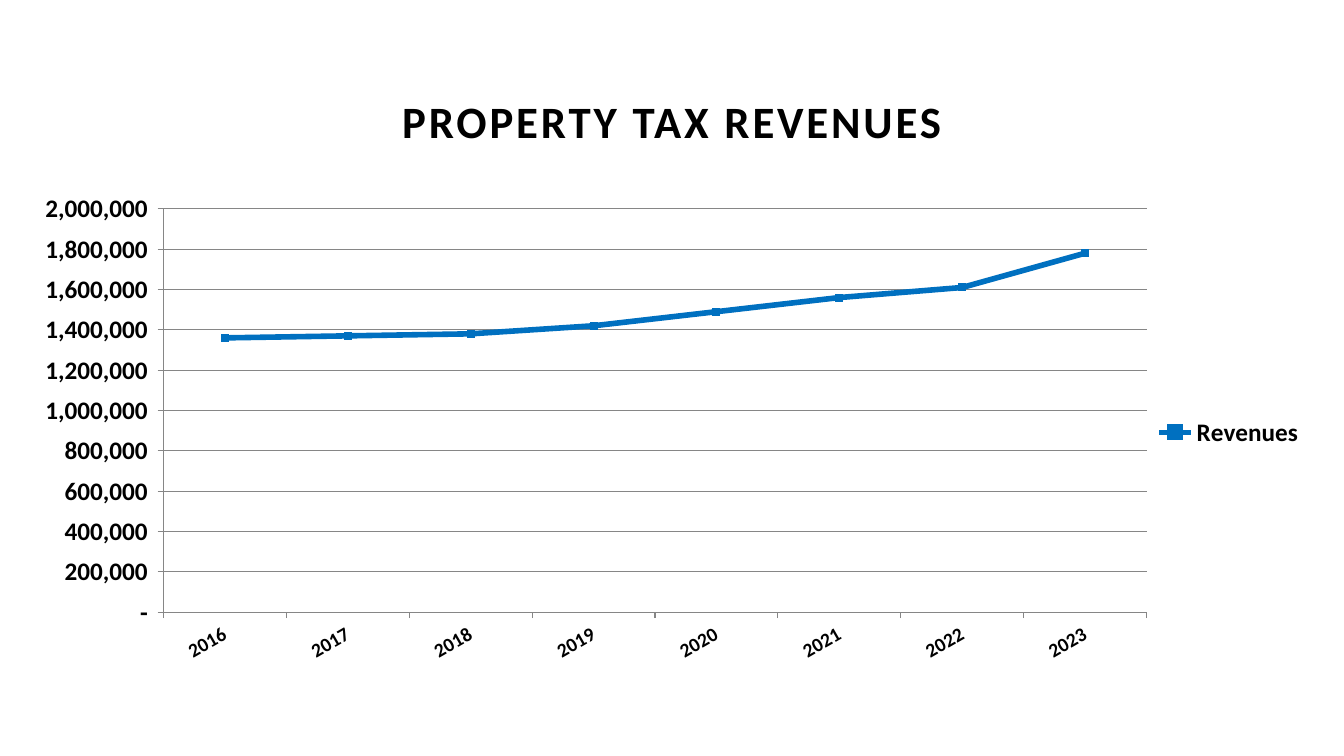
from lxml import etree
from pptx import Presentation
from pptx.chart.data import CategoryChartData
from pptx.dml.color import RGBColor
from pptx.enum.chart import XL_CHART_TYPE as ChartType
from pptx.enum.chart import XL_LEGEND_POSITION as LegendPos
from pptx.enum.chart import XL_MARKER_STYLE as Marker
from pptx.enum.chart import XL_TICK_MARK as Tick
from pptx.enum.text import MSO_ANCHOR, PP_ALIGN
from pptx.oxml.ns import qn
from pptx.util import Pt

PX = 9144  # 100 px to the inch
FONT = "Calibri"
BLACK, BLUE, GRAY = "000000", "0070C0", "868686"
YEARS = [str(year) for year in range(2016, 2024)]
REVENUES = [1360000, 1370000, 1380000, 1420000,
            1490000, 1560000, 1610000, 1780000]
NUMBER_FORMAT = r'_(* #,##0_);_(* \(#,##0\);_(* "-"_);_(@_)'
PLOT_BOX = {"x": 0.11, "y": 0.04, "w": 0.76, "h": 0.83}


def rgb(color):
    return RGBColor.from_string(color)


def emu(box):
    return [length * PX for length in box]


def style_font(font, size):
    font.name = FONT
    font.size = Pt(size)
    font.bold = True
    font.color.rgb = rgb(BLACK)


def style_line(line, color, width):
    line.color.rgb = rgb(color)
    line.width = Pt(width)


def add_title(slide, box, text):
    tf = slide.shapes.add_textbox(*emu(box)).text_frame
    tf.word_wrap = True
    tf.vertical_anchor = MSO_ANCHOR.MIDDLE
    tf.text = text
    p = tf.paragraphs[0]
    p.alignment = PP_ALIGN.CENTER
    r = p.runs[0]
    style_font(r.font, 32)
    r.font._element.set("spc", "200")


def place_plot(chart):
    """Fix the inner plot area as fractions of the chart."""
    plot_area = chart._chartSpace.chart.plotArea
    for old in plot_area.findall(qn("c:layout")):
        plot_area.remove(old)
    layout = etree.Element(qn("c:layout"))
    manual = etree.SubElement(layout, qn("c:manualLayout"))
    settings = {"layoutTarget": "inner", "xMode": "edge", "yMode": "edge",
                **PLOT_BOX}
    for tag, value in settings.items():
        etree.SubElement(manual, qn(f"c:{tag}")).set("val", str(value))
    plot_area.insert(0, layout)


def style_axis(axis, size):
    axis.major_tick_mark = Tick.OUTSIDE
    axis.minor_tick_mark = Tick.NONE
    style_font(axis.tick_labels.font, size)
    style_line(axis.format.line, GRAY, 0.75)


def add_revenue_chart(slide, box):
    data = CategoryChartData(number_format=NUMBER_FORMAT)
    data.categories = YEARS
    data.add_series("Revenues", REVENUES)
    chart = slide.shapes.add_chart(
        ChartType.LINE_MARKERS, *emu(box), data).chart
    chart.has_title = False
    style_font(chart.font, 18)
    place_plot(chart)

    years, amounts = chart.category_axis, chart.value_axis
    style_axis(years, 14)
    years._element.find(qn("c:txPr")).find(qn("a:bodyPr")).set("rot", "-1800000")
    style_axis(amounts, 18)
    amounts.minimum_scale, amounts.maximum_scale = 0, 2000000
    amounts.major_unit = 200000
    amounts.tick_labels.number_format = NUMBER_FORMAT
    amounts.tick_labels.number_format_is_linked = False
    amounts.has_major_gridlines = True
    style_line(amounts.major_gridlines.format.line, GRAY, 0.75)

    chart.has_legend = True
    chart.legend.position = LegendPos.RIGHT
    chart.legend.include_in_layout = False
    style_font(chart.legend.font, 18)

    chart.plots[0].vary_by_categories = False
    series = chart.plots[0].series[0]
    series.smooth = False
    style_line(series.format.line, BLUE, 4)
    marker = series.marker
    marker.style = Marker.SQUARE
    marker.size = 5
    marker.format.fill.solid()
    marker.format.fill.fore_color.rgb = rgb(BLUE)
    marker.format.line.color.rgb = rgb(BLUE)


def main():
    prs = Presentation()
    prs.slide_width, prs.slide_height = emu((1333, 750))
    slide = prs.slides.add_slide(prs.slide_layouts[6])
    add_title(slide, (25, 62, 1283, 115), "PROPERTY TAX REVENUES")
    add_revenue_chart(slide, (21, 188, 1283, 482))
    prs.save("out.pptx")


if __name__ == "__main__":
    main()
